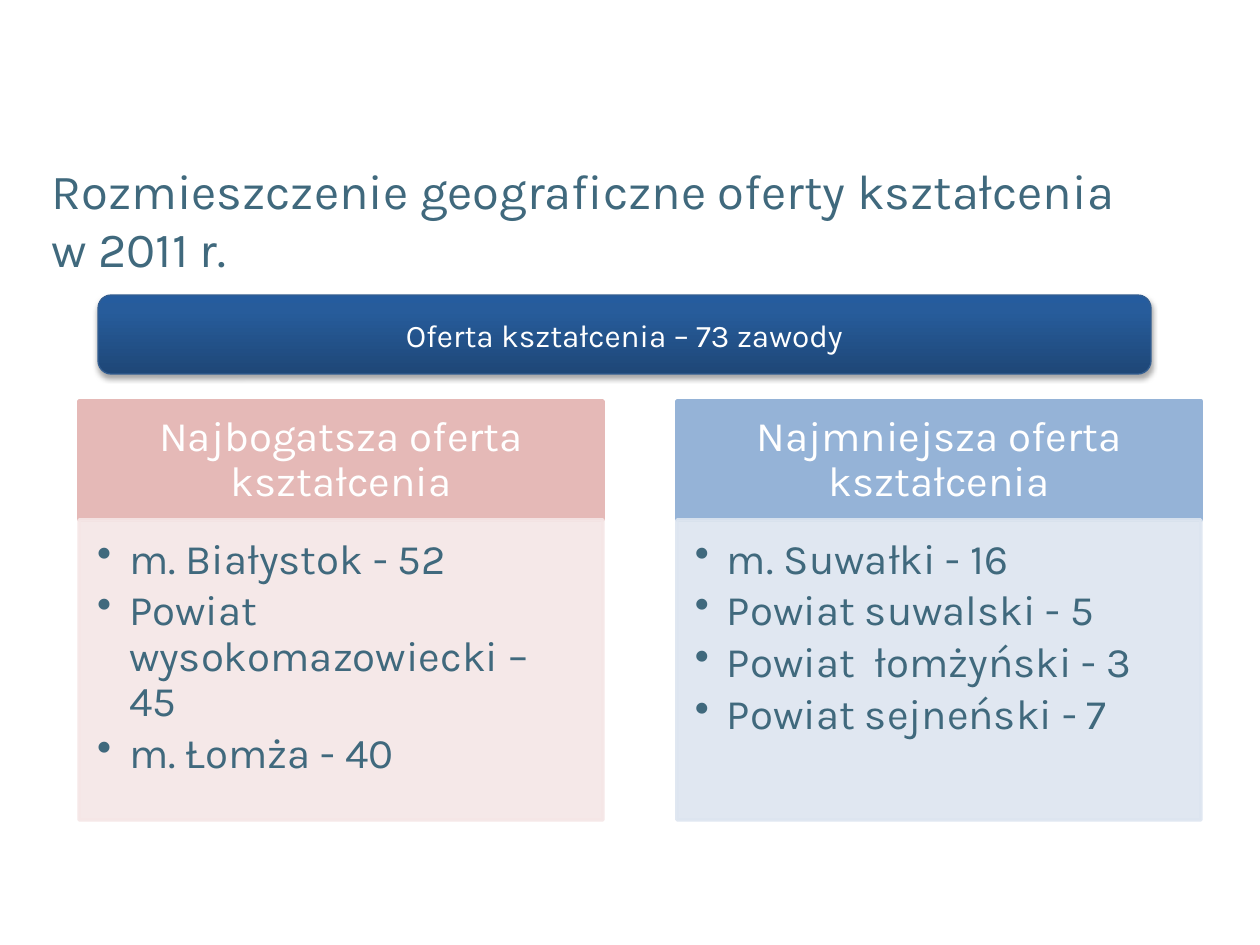
from lxml.etree import SubElement
from pptx import Presentation
from pptx.dml.color import RGBColor
from pptx.enum.shapes import MSO_SHAPE as Shape
from pptx.enum.text import MSO_ANCHOR as Anchor, PP_ALIGN as Align
from pptx.oxml import parse_xml
from pptx.oxml.ns import nsdecls, qn
from pptx.util import Emu, Pt

# Content
TITLE = "Rozmieszczenie geograficzne oferty kształcenia \vw 2011 r."
BANNER = "Oferta kształcenia – 73 zawody"
COLUMNS = [
    {
        "heading": "Najbogatsza oferta kształcenia",
        "items": ["m. Białystok - 52", "Powiat wysokomazowiecki – 45", "m. Łomża - 40"],
        "colors": ("E5B9B7", "F5E6E6"),
    },
    {
        "heading": "Najmniejsza oferta kształcenia",
        "items": ["m. Suwałki - 16", "Powiat suwalski - 5",
                  "Powiat  łomżyński - 3", "Powiat sejneński - 7"],
        "colors": ("95B3D7", "DDE5F0"),
    },
]

# Style and layout, in px
FONT, INK, WHITE = "Karla", "40697D", "FFFFFF"
BANNER_STOPS = [(0, "1E4777"), (80, "275C9B"), (100, "255C9E")]
BANNER_LINE = "335E91"
SLIDE_SIZE = (1260, 945)
TITLE_BOX = (39, 158, 1181, 126)
BANNER_BOX = (98, 295, 1053, 79)
COLUMN_LEFT, COLUMN_STEP, COLUMN_WIDTH = 79, 598, 524
HEADING_TOP, HEADING_HEIGHT, BODY_HEIGHT = 401, 119, 300
HEADING_INSETS = (24, 14, 24, 14)
BODY_INSETS = (18, 18, 24, 26)
BULLET_INDENT = 32


def px(value):
    return Emu(round(value * 914400 / 126))


def rgb(color):
    return RGBColor.from_string(color)


def format_text(text_frame, size, color, align=Align.LEFT):
    for paragraph in text_frame.paragraphs:
        paragraph.alignment = align
        for run in paragraph.runs:
            run.font.name = FONT
            run.font.size = Pt(size)
            run.font.color.rgb = rgb(color)


def add_panel(slide, box, color, insets, anchor):
    panel = slide.shapes.add_shape(Shape.RECTANGLE, *map(px, box))
    panel.shadow.inherit = False
    panel.fill.solid()
    panel.fill.fore_color.rgb = rgb(color)
    panel.line.color.rgb = rgb(color)
    panel.line.width = Pt(2)
    frame = panel.text_frame
    frame.word_wrap = True
    frame.vertical_anchor = anchor
    (frame.margin_left, frame.margin_top,
     frame.margin_right, frame.margin_bottom) = map(px, insets)
    return panel


def add_title(slide):
    frame = slide.shapes.add_textbox(*map(px, TITLE_BOX)).text_frame
    frame.word_wrap = True
    frame.vertical_anchor = Anchor.BOTTOM
    frame.text = TITLE
    format_text(frame, 28, INK)


def add_banner(slide):
    banner = slide.shapes.add_shape(Shape.ROUNDED_RECTANGLE, *map(px, BANNER_BOX))
    banner.line.color.rgb = rgb(BANNER_LINE)
    banner.line.width = Pt(0.75)
    banner.shadow.inherit = False
    properties = banner._element.spPr

    # Gradient running upwards
    stops = "".join(
        f'<a:gs pos="{position * 1000}"><a:srgbClr val="{color}"/></a:gs>'
        for position, color in BANNER_STOPS)
    gradient = parse_xml(
        f'<a:gradFill {nsdecls("a")} rotWithShape="1"><a:gsLst>{stops}</a:gsLst>'
        '<a:lin ang="16200000" scaled="0"/></a:gradFill>')
    properties.find(qn("a:prstGeom")).addnext(gradient)

    # Soft shadow below
    shadow = SubElement(properties.find(qn("a:effectLst")), qn("a:outerShdw"),
                        blurRad=str(Pt(3.1)), dist=str(Pt(1.8)),
                        dir="5400000", rotWithShape="0")
    shadow_color = SubElement(shadow, qn("a:srgbClr"), val="000000")
    SubElement(shadow_color, qn("a:alpha"), val="35000")

    frame = banner.text_frame
    frame.vertical_anchor = Anchor.MIDDLE
    frame.text = BANNER
    format_text(frame, 18, WHITE, Align.CENTER)


def add_bullet(paragraph):
    properties = paragraph._p.get_or_add_pPr()
    properties.set("marL", str(px(BULLET_INDENT)))
    properties.set("indent", str(-px(BULLET_INDENT)))
    SubElement(properties, qn("a:buChar"), char="•")


def add_column(slide, index, column):
    left = COLUMN_LEFT + index * COLUMN_STEP
    heading_color, body_color = column["colors"]

    # Heading
    heading = add_panel(slide, (left, HEADING_TOP, COLUMN_WIDTH, HEADING_HEIGHT),
                        heading_color, HEADING_INSETS, Anchor.MIDDLE)
    heading.text_frame.text = column["heading"]
    heading.text_frame.paragraphs[0].line_spacing = 0.9
    format_text(heading.text_frame, 24, WHITE, Align.CENTER)

    # Bulleted body, slightly transparent
    body = add_panel(slide, (left, HEADING_TOP + HEADING_HEIGHT, COLUMN_WIDTH, BODY_HEIGHT),
                     body_color, BODY_INSETS, Anchor.TOP)
    for color in body._element.spPr.iter(qn("a:srgbClr")):
        SubElement(color, qn("a:alpha"), val="90000")
    body.text_frame.text = "\n".join(column["items"])
    for paragraph in body.text_frame.paragraphs:
        add_bullet(paragraph)
        paragraph.line_spacing = 0.9
        paragraph.space_after = Pt(3.6)
    format_text(body.text_frame, 24, INK)


def main():
    presentation = Presentation()
    presentation.slide_width, presentation.slide_height = map(px, SLIDE_SIZE)
    slide = presentation.slides.add_slide(presentation.slide_layouts[6])
    add_title(slide)
    add_banner(slide)
    for index, column in enumerate(COLUMNS):
        add_column(slide, index, column)
    presentation.save("out.pptx")


if __name__ == "__main__":
    main()
